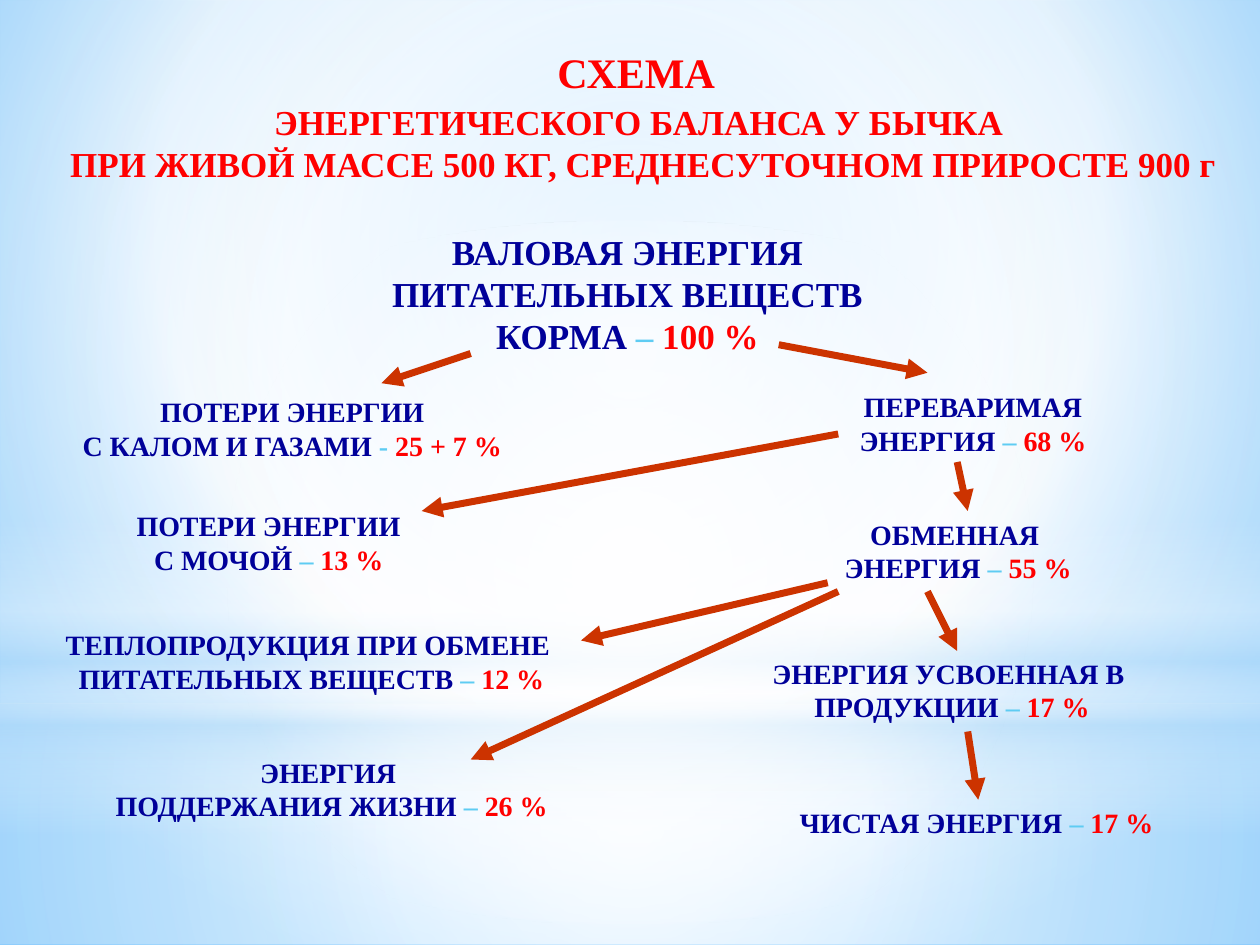
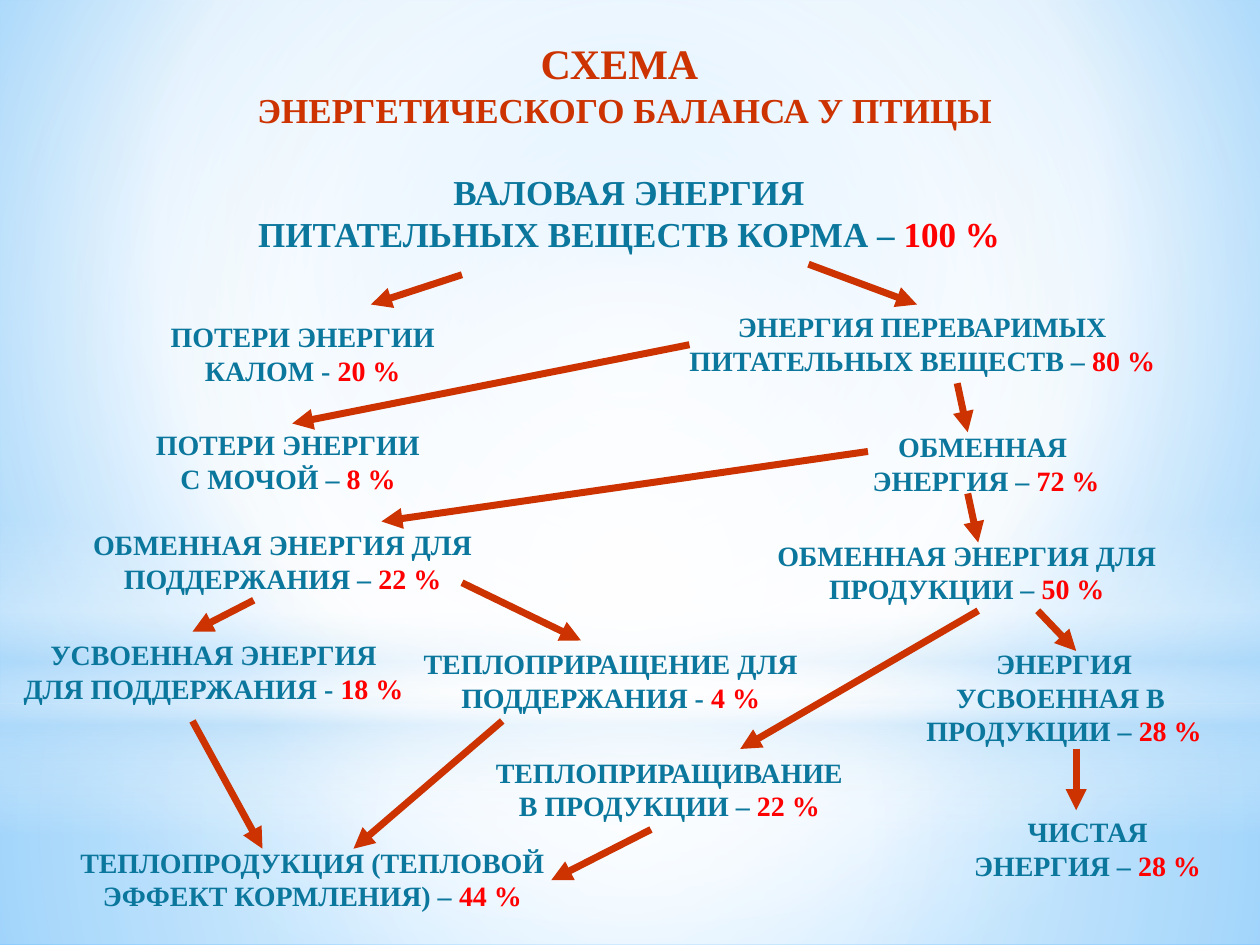
from lxml import etree
from pptx import Presentation
from pptx.dml.color import RGBColor
from pptx.enum import shapes, text
from pptx.oxml import ns
from pptx.util import Pt

FONT = "Times New Roman"
RED = RGBColor(0xFF, 0x00, 0x00)
RUST = RGBColor(0xCC, 0x33, 0x00)
NAVY = RGBColor(0x00, 0x00, 0x99)
TEAL = RGBColor(0x0C, 0x77, 0x9D)
SKY = RGBColor(0x5E, 0xCC, 0xF3)
WHITE = RGBColor(0xFF, 0xFF, 0xFF)
PALE = RGBColor(0xB4, 0xDC, 0xFA)
AZURE = RGBColor(0x9E, 0xD5, 0xFF)
BLUE = RGBColor(0x5B, 0xB9, 0xFF)

WIDE, HIGH = 720, 540
HORIZON = 402
MID = (50, 50, 50, 50)
RECT, OVAL = shapes.MSO_SHAPE.RECTANGLE, shapes.MSO_SHAPE.OVAL

# Preset, box, stops (place, colour, opacity), focus of the glow (None: top to bottom)
BANDS = [
    (RECT, (0, HORIZON, WIDE, HIGH - HORIZON),
     [(0, WHITE, 91), (37, WHITE, 76), (100, PALE, 79)], MID),
    (RECT, (0, 0, WIDE, HORIZON),
     [(0, WHITE, 89), (48, WHITE, 62), (100, PALE, 79)], MID),
    (RECT, (0, 297, WIDE, 180),
     [(0, WHITE, 0), (29, WHITE, 30), (45, PALE, 40), (55, WHITE, 26),
      (65, PALE, 60), (100, WHITE, 0)], None),
    (OVAL, (0, 126, WIDE, 402), [(0, WHITE, 100), (56, WHITE, 0)], MID),
]

# Labels: left, top, width, height, text; "|" parts the name, the dash and the share
BULL = dict(
    title=[[("СХЕМА", 24), (" ", 32)],
           [("ЭНЕРГЕТИЧЕСКОГО БАЛАНСА У БЫЧКА ", 20)],
           [("ПРИ ЖИВОЙ МАССЕ 500 КГ, СРЕДНЕСУТОЧНОМ ПРИРОСТЕ 900 г", 20)]],
    head=(30, 15, 675, 94), tint=RED, top=128, hues=(NAVY, SKY, RED),
    labels=[
        (179, 0, 359, 79, "ВАЛОВАЯ ЭНЕРГИЯ\nПИТАТЕЛЬНЫХ ВЕЩЕСТВ КОРМА |– |100 %"),
        (31, 94, 272, 46, "ПОТЕРИ ЭНЕРГИИ\nС КАЛОМ И ГАЗАМИ |- |25 + 7 %"),
        (474, 91, 164, 46, "ПЕРЕВАРИМАЯ\nЭНЕРГИЯ |– |68 %"),
        (60, 159, 187, 46, "ПОТЕРИ ЭНЕРГИИ\nС МОЧОЙ |– |13 %"),
        (463, 164, 169, 46, "ОБМЕННАЯ \nЭНЕРГИЯ |– |55 %"),
        (19, 227, 318, 46, "ТЕПЛОПРОДУКЦИЯ ПРИ ОБМЕНЕ \nПИТАТЕЛЬНЫХ ВЕЩЕСТВ |– |12 %"),
        (433, 243.5, 222, 46, "ЭНЕРГИЯ УСВОЕННАЯ В \nПРОДУКЦИИ |– |17 %"),
        (42, 300, 295, 46, "ЭНЕРГИЯ \nПОДДЕРЖАНИЯ ЖИЗНИ |– |26 %"),
        (439, 328.5, 238, 27, "ЧИСТАЯ ЭНЕРГИЯ |– |17 %"),
    ],
    arrows=[
        (269, 74, 218, 91), (445, 69, 530, 85), (479, 120, 241, 164),
        (547, 136, 553, 164), (473, 205, 332, 238), (479, 210, 269, 306),
        (530, 210, 547, 244), (553, 290, 559, 329),
    ])

BIRD = dict(
    title=[[("СХЕМА ", 24)], [("ЭНЕРГЕТИЧЕСКОГО БАЛАНСА У ПТИЦЫ", 20)]],
    head=(139, 18, 436, 60), tint=RUST, top=94, hues=(TEAL, TEAL, RED),
    labels=[
        (116, 0, 487, 55, "ВАЛОВАЯ ЭНЕРГИЯ\nПИТАТЕЛЬНЫХ ВЕЩЕСТВ КОРМА |– |100 %"),
        (37, 85, 272, 46, "ПОТЕРИ ЭНЕРГИИ\nКАЛОМ |- |20 %"),
        (377, 79.5, 300, 46, "ЭНЕРГИЯ ПЕРЕВАРИМЫХ ПИТАТЕЛЬНЫХ ВЕЩЕСТВ |– |80 %"),
        (71, 147, 187, 46, "ПОТЕРИ ЭНЕРГИИ\nС МОЧОЙ |– |8 %"),
        (479, 148, 169, 46, "ОБМЕННАЯ \nЭНЕРГИЯ |– |72 %"),
        (428, 210, 249, 46, "ОБМЕННАЯ ЭНЕРГИЯ ДЛЯ ПРОДУКЦИИ |– |50 %"),
        (37, 204, 249, 46, "ОБМЕННАЯ ЭНЕРГИЯ ДЛЯ ПОДДЕРЖАНИЯ |– |22 %"),
        (3, 267, 238, 46, "УСВОЕННАЯ ЭНЕРГИЯ ДЛЯ ПОДДЕРЖАНИЯ |- |18 %"),
        (230, 272, 238, 46, "ТЕПЛОПРИРАЩЕНИЕ ДЛЯ ПОДДЕРЖАНИЯ |- |4 %"),
        (269, 334, 227, 46, "ТЕПЛОПРИРАЩИВАНИЕ В ПРОДУКЦИИ |– |22 %"),
        (513, 272, 190, 65, "ЭНЕРГИЯ УСВОЕННАЯ В \nПРОДУКЦИИ |– |28 %"),
        (31, 385.5, 295, 46, "ТЕПЛОПРОДУКЦИЯ (ТЕПЛОВОЙ ЭФФЕКТ КОРМЛЕНИЯ) |– |44 %"),
        (541, 368, 161, 46, "ЧИСТАЯ ЭНЕРГИЯ |– |28 %"),
    ],
    arrows=[
        (264, 63, 212, 80), (462, 57, 524, 80), (394, 103, 167, 148),
        (547, 125, 553, 153), (496, 164, 218, 204), (145, 249, 110, 267),
        (553, 188, 559, 216), (593, 255, 615, 278), (264, 239, 332, 272),
        (559, 255, 423, 334), (615, 334, 615, 369), (110, 318, 150, 391),
        (287, 318, 202, 391), (372, 380, 315, 409),
    ])


def assign(item, form):
    for name, value in form.items():
        setattr(item, name, value)


def add(parent, tag, **attrs):
    return etree.SubElement(parent, ns.qn(tag), attrs)


def blend(fill, root, stops, focus):
    """Give the first gradient under root its stops and direction."""
    fill.gradient()
    grad = root.find(".//" + ns.qn("a:gradFill"))
    for child in list(grad):
        grad.remove(child)
    row = add(grad, "a:gsLst")
    for place, hue, alpha in stops:
        stop = add(row, "a:gs", pos=str(place * 1000))
        shade = add(stop, "a:srgbClr", val=str(hue))
        add(shade, "a:alpha", val=str(alpha * 1000))
    if focus:
        way = add(grad, "a:path", path="circle")
        add(way, "a:fillToRect", **{k: str(v * 1000) for k, v in zip("ltrb", focus)})
    else:
        add(grad, "a:lin", ang="5400000", scaled="0")


def backdrop(master, slide):
    """Paint the shared background and move its bands to the master."""
    blend(master.background.fill, master.element,
          [(0, AZURE, 100), (60, WHITE, 100), (100, BLUE, 100)], (20, 10, 20, 60))
    tree = master.element.cSld.spTree
    for depth, (kind, box, stops, focus) in enumerate(BANDS):
        band = slide.shapes.add_shape(kind, *map(Pt, box))
        band.shadow.inherit = False
        band.line.fill.background()
        blend(band.fill, band.element, stops, focus)
        tree.insert(2 + depth, band.element)


def write(frame, lines, form):
    """Fill a frame with centred lines of (text, size, colour) runs."""
    assign(frame, dict(form, auto_size=text.MSO_AUTO_SIZE.NONE))
    for i, line in enumerate(lines):
        para = frame.paragraphs[0] if i == 0 else frame.add_paragraph()
        para.alignment = text.PP_ALIGN.CENTER
        for words, size, hue in line:
            run = para.add_run()
            run.text = words
            assign(run.font, dict(name=FONT, bold=True, size=Pt(size)))
            run.font.color.rgb = hue


def heading(slide, box, lines, tint):
    title = slide.shapes.title
    assign(title, dict(zip(("left", "top", "width", "height"), map(Pt, box))))
    write(title.text_frame, [[(*run, tint) for run in line] for line in lines],
          dict(word_wrap=False, vertical_anchor=text.MSO_ANCHOR.MIDDLE))


def label(slide, box, words, size, hues):
    lines = [[(part, size, hue) for part, hue in zip(line.split("|"), hues)]
             for line in words.split("\n")]
    frame = slide.shapes.add_textbox(*map(Pt, box)).text_frame
    write(frame, lines, dict(word_wrap=True))


def arrow(slide, ends):
    link = slide.shapes.add_connector(shapes.MSO_CONNECTOR.STRAIGHT, *map(Pt, ends))
    link.line.width = Pt(4)
    link.line.color.rgb = RUST
    add(link.line._get_or_add_ln(), "a:tailEnd", type="triangle")
    add(link.element.spPr, "a:effectLst")


def scheme(slide, top, labels, arrows, hues):
    """Draw the energy flow below the given top; its first label is the largest."""
    for i, (x, y, w, h, words) in enumerate(labels):
        label(slide, (x, top + y, w, h), words, 16 if i else 20, hues)
    for x1, y1, x2, y2 in arrows:
        arrow(slide, (x1, top + y1, x2, top + y2))


def main():
    deck = Presentation()
    deck.slide_width, deck.slide_height = Pt(WIDE), Pt(HIGH)
    for page in (BULL, BIRD):
        slide = deck.slides.add_slide(deck.slide_layouts[5])
        heading(slide, page["head"], page["title"], page["tint"])
        scheme(slide, page["top"], page["labels"], page["arrows"], page["hues"])
    backdrop(deck.slide_master, slide)
    deck.save("out.pptx")


if __name__ == "__main__":
    main()
